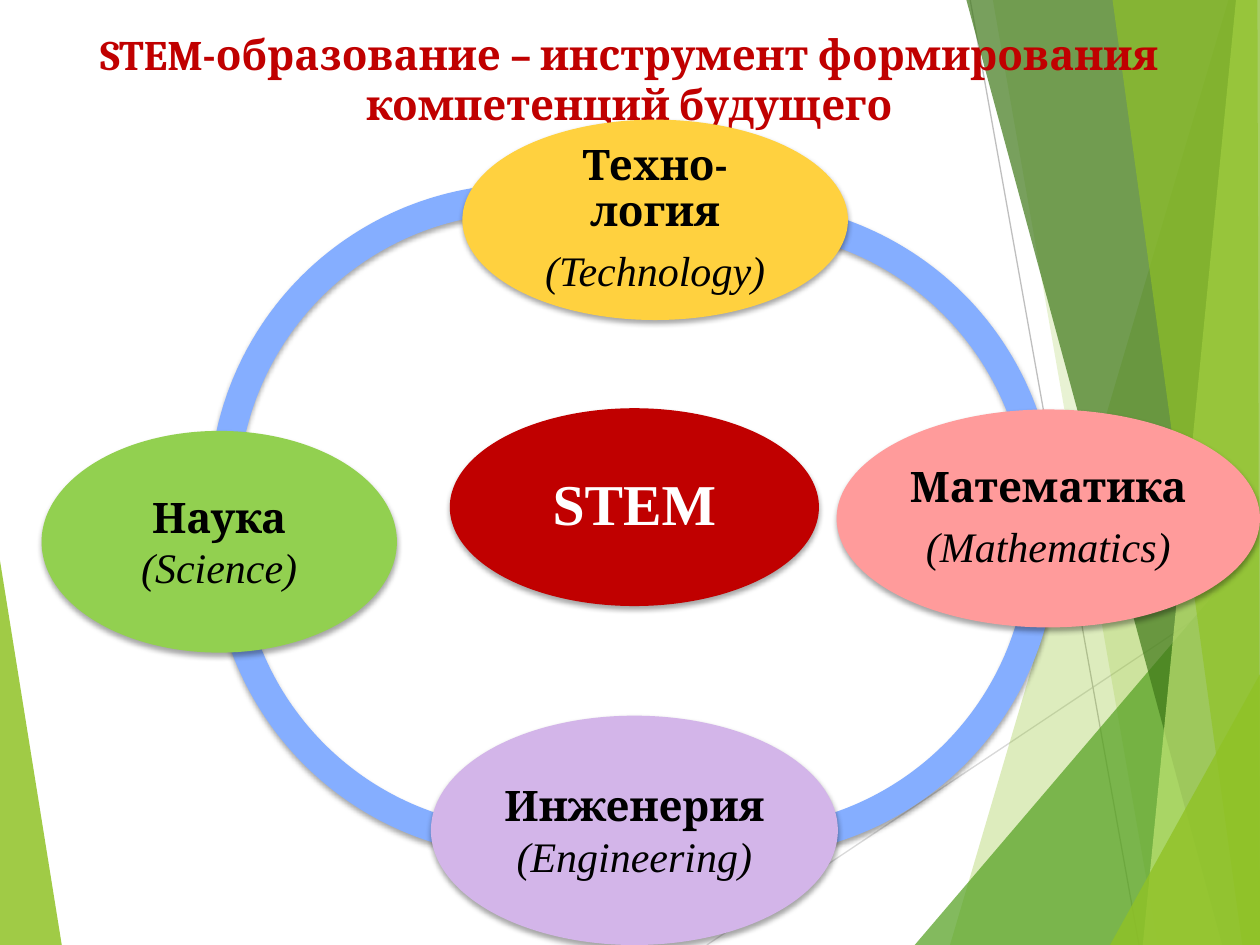
from lxml.etree import SubElement
from pptx import Presentation
from pptx.dml.color import RGBColor
from pptx.enum.shapes import MSO_CONNECTOR as CONN, MSO_SHAPE as SHAPE
from pptx.enum.text import MSO_ANCHOR as ANCHOR, PP_ALIGN as ALIGN
from pptx.oxml.ns import qn
from pptx.util import Inches, Pt

W, H = 10, 7.5
HEAD = {"name": "Cambria", "size": Pt(24), "bold": True}
SUB = {"name": "Times New Roman", "size": Pt(24), "bold": False, "italic": True}
HUB = {"name": "Times New Roman", "size": Pt(33), "bold": True}
TIGHT = {"line_spacing": 0.9, "space_after": Pt(8.4)}

FACETS = [
    ([(0, 4.45), (0.49, H), (0, H)], "90C226", 85),
    ([(9.75, 0), (7.54, H), (W, H), (W, 0)], "90C226", 30),
    ([(7.88, 0), (9.19, H), (W, H), (W, 0)], "90C226", 20),
    ([(7.26, H), (W, 4.29), (W, H)], "54A021", 72),
    ([(7.67, 0), (9.7, H), (W, H), (W, 0)], "3F7819", 70),
    ([(9.81, 0), (9.07, H), (W, H), (W, 0)], "C0E474", 70),
    ([(8.83, 0), (9.86, H), (W, H), (9.98, 0)], "90C226", 65),
    ([(8.81, H), (W, 5.35), (W, H)], "90C226", 80),
]
RAYS = [((5.61, H), (W, 4.57), "D9D9D9"), ((7.7, 0), (9.04, H), "BFBFBF")]
ARCS = [
    (1.66, 1.46, 172.11, 295.13),
    (1.68, 1.8, 69.7, 180.06),
    (3.39, 1.8, 355.63, 110.47),
    (3.38, 1.6, 253.83, 0.46),
]
NODES = [
    ((3.57, 3.24, 2.93, 1.57), "C00000", [("STEM", HUB, "FFFFFF")], TIGHT),
    ((3.67, 0.95, 3.06, 1.59), "FFD13F",
     [("Техно-логия", HEAD, "000000"), ("(Technology)", SUB, "000000")], TIGHT),
    ((6.64, 3.25, 3.36, 1.73), "FF9B9B",
     [("Математика", HEAD, "000000"), ("(Mathematics)", SUB, "000000")], TIGHT),
    ((3.42, 5.68, 3.23, 1.82), "D3B5E9",
     [("Инженерия", HEAD, "000000"), ("(Engineering)", SUB, "000000")], {}),
    ((0.33, 3.42, 2.82, 1.76), "92D050",
     [("Наука", HEAD, "000000"), ("(Science)", SUB, "000000")], {}),
]


def rgb(color):
    return RGBColor.from_string(color)


def apply(obj, fmt):
    for key, value in fmt.items():
        setattr(obj, key, value)


def inches(*values):
    return [Inches(v) for v in values]


def paint(sp, color, alpha=None):
    sp.shadow.inherit = False
    sp.fill.solid()
    sp.fill.fore_color.rgb = rgb(color)
    sp.line.fill.background()
    if alpha is not None:
        clr = sp.element.spPr.find(qn("a:solidFill"))[0]
        SubElement(clr, qn("a:alpha"), val=str(alpha * 1000))


def drop_shadow(sp):
    effects = sp.element.spPr.find(qn("a:effectLst"))
    shadow = SubElement(effects, qn("a:outerShdw"), blurRad=str(Pt(3)),
                        dist=str(Pt(2)), dir="5400000", rotWithShape="0")
    clr = SubElement(shadow, qn("a:srgbClr"), val="000000")
    SubElement(clr, qn("a:alpha"), val="35000")


def write(p, text, font, color):
    r = p.add_run()
    r.text = text
    apply(r.font, font)
    r.font.color.rgb = rgb(color)
    p.alignment = ALIGN.CENTER


def add_facet(s, points, color, alpha):
    start, *rest = [inches(*pt) for pt in points]
    fb = s.shapes.build_freeform(*start)
    fb.add_line_segments(rest, close=True)
    paint(fb.convert_to_shape(), color, alpha)


def add_ray(s, start, end, color):
    ln = s.shapes.add_connector(CONN.STRAIGHT, *inches(*start, *end))
    ln.line.color.rgb = rgb(color)
    ln.line.width = Pt(0.75)
    SubElement(ln.element.spPr, qn("a:effectLst"))


def add_backdrop(s):
    add_facet(s, *FACETS[0])
    for ray in RAYS:
        add_ray(s, *ray)
    for facet in FACETS[1:]:
        add_facet(s, *facet)


def add_title(s, box, text):
    sp = s.shapes.title
    sp.element.getparent().append(sp.element)
    apply(sp, dict(zip(("left", "top", "width", "height"), inches(*box))))
    tf = sp.text_frame
    apply(tf, {"word_wrap": True, "vertical_anchor": ANCHOR.MIDDLE})
    write(tf.paragraphs[0], text, HEAD, "C00000")


def add_arc(s, left, top, start, end):
    sp = s.shapes.add_shape(SHAPE.BLOCK_ARC, *inches(left, top, 5, 5))
    for i, value in enumerate((start * 0.6, end * 0.6, 0.046)):
        sp.adjustments[i] = value
    paint(sp, "85AEFF")
    drop_shadow(sp)


def add_node(s, box, color, lines, spacing):
    sp = s.shapes.add_shape(SHAPE.OVAL, *inches(*box))
    paint(sp, color)
    drop_shadow(sp)
    tf = sp.text_frame
    apply(tf, {"word_wrap": True, "vertical_anchor": ANCHOR.MIDDLE})
    apply(tf, {f"margin_{side}": Inches(0.03)
               for side in ("left", "top", "right", "bottom")})
    for i, line in enumerate(lines):
        p = tf.add_paragraph() if i else tf.paragraphs[0]
        write(p, *line)
        apply(p, spacing)


def add_cycle(s):
    for arc in ARCS:
        add_arc(s, *arc)
    for node in NODES:
        add_node(s, *node)


def main():
    prs = Presentation()
    prs.slide_width, prs.slide_height = inches(W, H)
    s = prs.slides.add_slide(prs.slide_layouts[5])
    add_backdrop(s)
    add_title(s, (0.58, 0.17, 8.83, 0.91),
              "STEM-образование – инструмент формирования компетенций будущего")
    add_cycle(s)
    prs.save("out.pptx")


if __name__ == "__main__":
    main()
